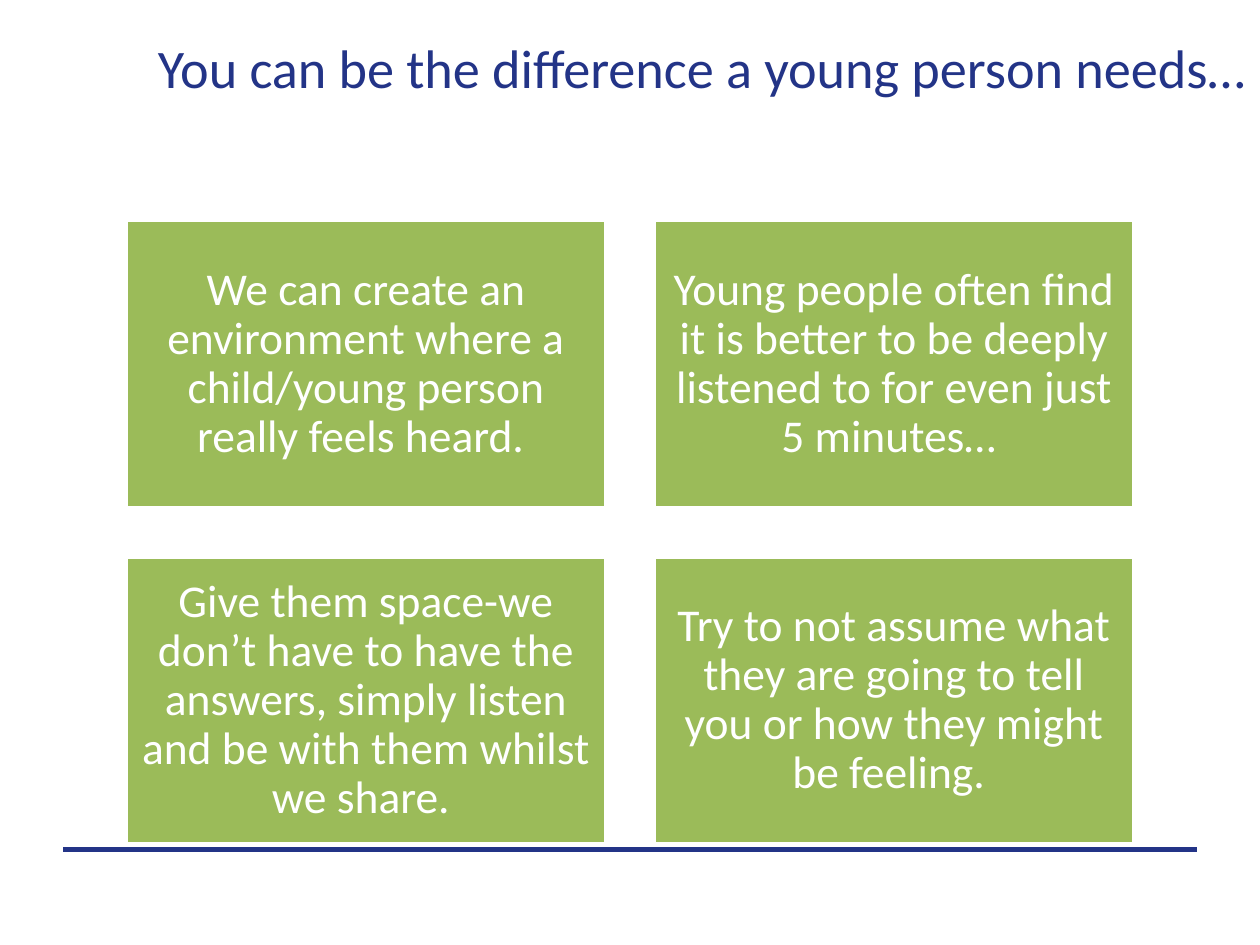
from lxml.etree import SubElement
from pptx import Presentation
from pptx.dml.color import RGBColor
from pptx.enum.shapes import MSO_CONNECTOR, MSO_SHAPE
from pptx.enum.text import MSO_ANCHOR, MSO_AUTO_SIZE, PP_ALIGN
from pptx.oxml.ns import qn
from pptx.util import Inches, Pt

NAVY = RGBColor(0x23, 0x34, 0x87)
GREEN = RGBColor(0x9B, 0xBB, 0x59)
WHITE = RGBColor(0xFF, 0xFF, 0xFF)

WIDE, HIGH = 10, 7.5
COLS = 2
LEFT, TOP = 1, 1.75
CARD_W, CARD_H = 3.81, 2.28
GAP_X = WIDE - 2 * LEFT - COLS * CARD_W
GAP_Y = 0.39

TITLE = "You can be the difference a young person needs…"
CARDS = [
    "We can create an environment where a child/young person really feels heard. ",
    "Young people often find it is better to be deeply listened to for even just 5 minutes… ",
    "Give them space-we don’t have to have the answers, simply listen and be with them whilst we share. ",
    "Try to not assume what they are going to tell you or how they might be feeling. ",
]


def put_text(shape, text, size, color, inset):
    frame = shape.text_frame
    frame.word_wrap = True
    frame.auto_size = MSO_AUTO_SIZE.NONE
    frame.vertical_anchor = MSO_ANCHOR.MIDDLE
    frame.margin_left = frame.margin_right = Inches(inset)
    frame.margin_top = frame.margin_bottom = Inches(inset)
    para = frame.paragraphs[0]
    para.alignment = PP_ALIGN.CENTER
    para.line_spacing = 0.9
    para.space_before = Pt(0)
    run = para.add_run()
    run.text = text
    run.font.name = "Calibri"
    run.font.size = Pt(size)
    run.font.color.rgb = color


def set_title(slide):
    title = slide.shapes.title
    title.left, title.top = Inches(1.14), Inches(0.06)
    title.width, title.height = Inches(8.85), Inches(1.01)
    put_text(title, TITLE, size=31, color=NAVY, inset=0.05)


def add_rule(slide):
    """Draw the line across the foot of the slide."""
    y = Inches(6.74)
    rule = slide.shapes.add_connector(
        MSO_CONNECTOR.STRAIGHT, Inches(0.05 * WIDE), y, Inches(0.95 * WIDE), y)
    rule.line.color.rgb = NAVY
    rule.line.width = Pt(3)
    SubElement(rule.element.spPr, qn("a:effectLst"))


def add_card(slide, index, text):
    row, col = divmod(index, COLS)
    card = slide.shapes.add_shape(
        MSO_SHAPE.RECTANGLE,
        Inches(LEFT + col * (CARD_W + GAP_X)),
        Inches(TOP + row * (CARD_H + GAP_Y)),
        Inches(CARD_W), Inches(CARD_H))
    card.shadow.inherit = False
    card.fill.solid()
    card.fill.fore_color.rgb = GREEN
    card.line.color.rgb = WHITE
    card.line.width = Pt(2)
    put_text(card, text, size=26, color=WHITE, inset=0.11)


def main():
    deck = Presentation()
    deck.slide_width, deck.slide_height = Inches(WIDE), Inches(HIGH)
    slide = deck.slides.add_slide(deck.slide_layouts[5])
    add_rule(slide)
    set_title(slide)
    for index, text in enumerate(CARDS):
        add_card(slide, index, text)
    deck.save("out.pptx")


if __name__ == "__main__":
    main()
